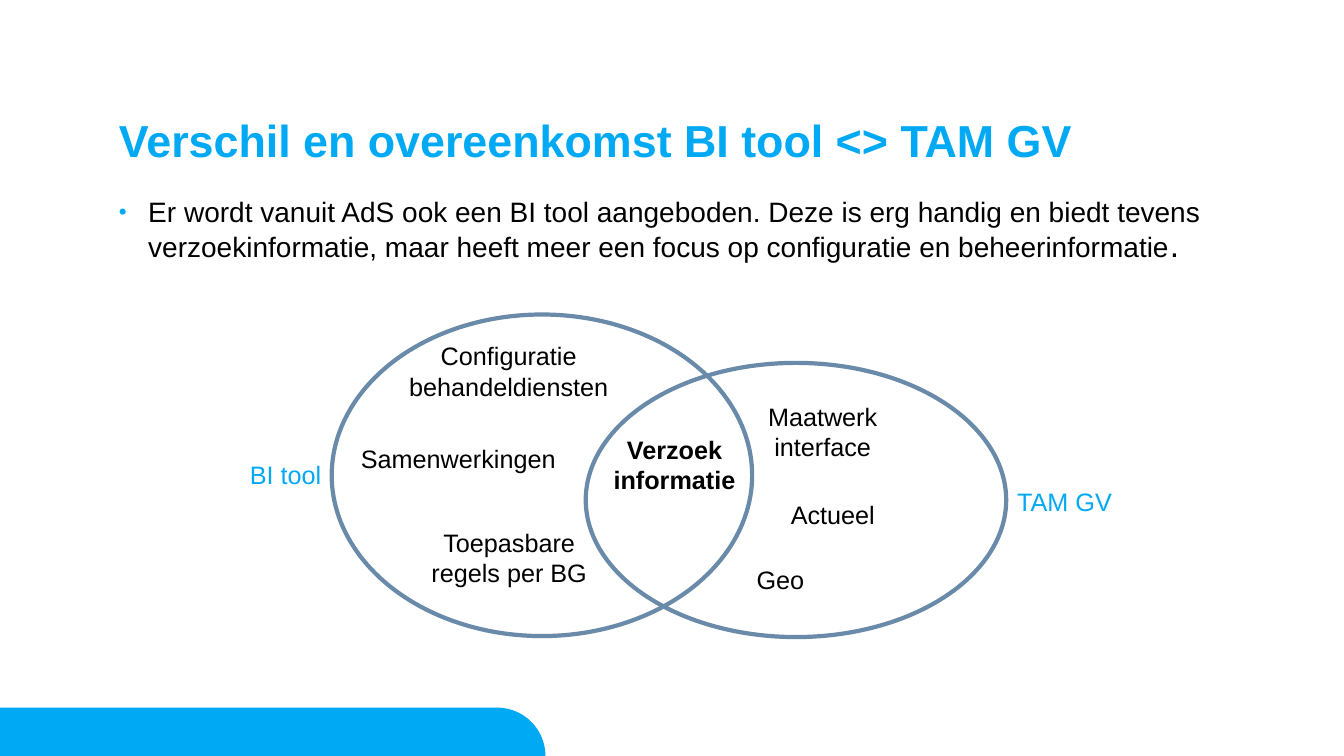
import math
from dataclasses import dataclass

from lxml import etree
from pptx import Presentation
from pptx.dml.color import RGBColor
from pptx.enum.shapes import MSO_SHAPE
from pptx.enum.text import MSO_ANCHOR, MSO_AUTO_SIZE, PP_ALIGN
from pptx.oxml.ns import qn
from pptx.util import Inches, Pt

ELLIPSE = MSO_SHAPE.OVAL
TOP = MSO_ANCHOR.TOP
NO_FIT = MSO_AUTO_SIZE.NONE
LEFT, CENTER = PP_ALIGN.LEFT, PP_ALIGN.CENTER


@dataclass(frozen=True)
class Theme:
    font: str = "Arial"
    accent: RGBColor = RGBColor(0x00, 0xA9, 0xF3)
    ink: RGBColor = RGBColor(0x00, 0x00, 0x00)
    ring: RGBColor = RGBColor(0x69, 0x8A, 0xA9)
    title_size: int = 32
    body_size: int = 20
    stop_size: int = 24
    label_size: int = 18
    ring_width: int = 3
    line_spacing: float = 0.9


class VennSlide:
    def __init__(self, presentation, theme):
        self.theme = theme
        self.slide = presentation.slides.add_slide(presentation.slide_layouts[1])

    def add_run(self, paragraph, text, size, color, bold=False):
        run = paragraph.add_run()
        run.text = text
        run.font.name = self.theme.font
        run.font.size = Pt(size)
        run.font.bold = bold
        run.font.color.rgb = color

    def place(self, holder, left, top, width, height):
        holder.left, holder.top = Inches(left), Inches(top)
        holder.width, holder.height = Inches(width), Inches(height)
        frame = holder.text_frame
        frame.margin_left = frame.margin_right = 0
        frame.margin_top = frame.margin_bottom = 0
        frame.vertical_anchor = TOP
        frame.auto_size = NO_FIT
        frame.word_wrap = True
        paragraph = frame.paragraphs[0]
        paragraph.alignment = LEFT
        paragraph.line_spacing = self.theme.line_spacing
        paragraph.space_before = Pt(0)
        return paragraph

    def title(self, text, *box):
        paragraph = self.place(self.slide.shapes.title, *box)
        self.add_run(paragraph, text, self.theme.title_size, self.theme.accent, True)

    def bullet(self, runs, *box):
        paragraph = self.place(self.slide.placeholders[1], *box)
        properties = paragraph._p.get_or_add_pPr()
        indent = Inches(0.29)
        properties.set("marL", str(indent))
        properties.set("indent", str(-indent))
        bullet_color = etree.SubElement(properties, qn("a:buClr"))
        etree.SubElement(bullet_color, qn("a:srgbClr"), val=str(self.theme.accent))
        etree.SubElement(properties, qn("a:buSzPct"), val="80000")
        etree.SubElement(properties, qn("a:buFont"), typeface=self.theme.font)
        etree.SubElement(properties, qn("a:buChar"), char="•")
        for text, size in runs:
            self.add_run(paragraph, text, size, self.theme.ink)

    def footer_tab(self, width, top, bottom):
        radius = bottom - top
        steps = 24
        angles = [math.pi / 2 * step / steps for step in range(steps + 1)]
        curve = [
            (Inches(width - radius + radius * math.sin(angle)),
             Inches(bottom - radius * math.cos(angle)))
            for angle in angles
        ]
        builder = self.slide.shapes.build_freeform(0, Inches(top))
        builder.add_line_segments(curve + [(0, Inches(bottom))], close=True)
        tab = builder.convert_to_shape()
        tab.shadow.inherit = False
        tab.fill.solid()
        tab.fill.fore_color.rgb = self.theme.accent
        tab.line.fill.background()

    def ring(self, *box):
        ring = self.slide.shapes.add_shape(ELLIPSE, *map(Inches, box))
        ring.shadow.inherit = False
        ring.fill.background()
        ring.line.color.rgb = self.theme.ring
        ring.line.width = Pt(self.theme.ring_width)

    def label(self, lines, box, color, align=CENTER, bold=False, wrap=False):
        frame = self.slide.shapes.add_textbox(*map(Inches, box)).text_frame
        frame.word_wrap = wrap
        for index, line in enumerate(lines):
            paragraph = frame.add_paragraph() if index else frame.paragraphs[0]
            paragraph.alignment = align
            self.add_run(paragraph, line, self.theme.label_size, color, bold)


def main():
    theme = Theme()
    presentation = Presentation()
    presentation.slide_width = Inches(13.33)
    presentation.slide_height = Inches(7.5)
    venn = VennSlide(presentation, theme)

    venn.footer_tab(5.41, 7.02, 7.5)
    venn.title("Verschil en overeenkomst BI tool <> TAM GV", 1.18, 1.18, 10.97, 0.79)
    venn.bullet(
        [
            ("Er wordt vanuit AdS ook een BI tool aangeboden. Deze is erg handig en "
             "biedt tevens verzoekinformatie, maar heeft meer een focus op configuratie "
             "en beheerinformatie", theme.body_size),
            (".", theme.stop_size),
        ],
        1.18, 1.97, 10.97, 4.92,
    )

    venn.ring(5.81, 3.6, 4.17, 2.72)
    venn.ring(3.29, 3.12, 4.17, 3.19)

    venn.label(["Verzoek", "informatie"], (5.98, 4.26, 1.42, 0.71), theme.ink, bold=True)
    venn.label(["Toepasbare regels per BG"], (3.96, 5.18, 2.18, 0.71), theme.ink, wrap=True)
    features = [
        (["Configuratie", "behandeldiensten"], (3.95, 3.33, 2.19, 0.71)),
        (["Samenwerkingen"], (3.47, 4.35, 2.15, 0.4)),
        (["Maatwerk", "interface"], (7.51, 3.93, 1.3, 0.71)),
        (["Actueel"], (7.74, 4.9, 1.04, 0.4)),
        (["Geo"], (7.4, 5.55, 0.68, 0.4)),
    ]
    for lines, box in features:
        venn.label(lines, box, theme.ink)
    tools = [
        ("BI tool", (2.38, 4.51, 0.92, 0.4)),
        ("TAM GV", (9.99, 4.78, 1.15, 0.4)),
    ]
    for tool, box in tools:
        venn.label([tool], box, theme.accent, align=LEFT)

    presentation.save("out.pptx")


if __name__ == "__main__":
    main()
